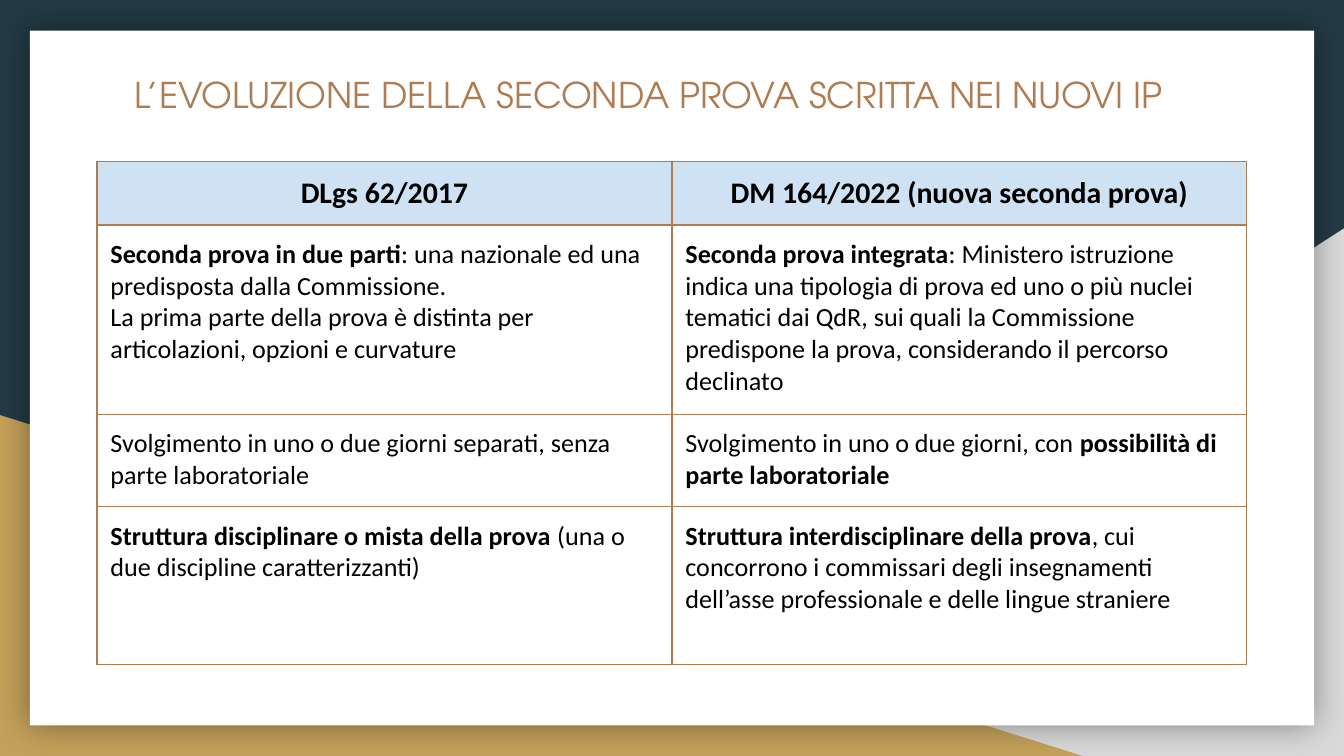
import pptx
import pptx.dml.color
import pptx.enum.shapes
import pptx.enum.text
import pptx.oxml
import pptx.oxml.ns
import pptx.util

Pt = pptx.util.Pt
qn = pptx.oxml.ns.qn
SHAPE = pptx.enum.shapes.MSO_SHAPE
ALIGN = pptx.enum.text.PP_ALIGN

COLORS = {
    "night": "233A44",
    "grey": "D9D9D9",
    "gold": "C4A15A",
    "paper": "FFFFFF",
    "copper": "AF7B51",
    "header": "CFE2F3",
    "ink": "000000",
}
TITLE = "L’EVOLUZIONE DELLA SECONDA PROVA SCRITTA NEI NUOVI IP"
HEADINGS = ["DLgs 62/2017", "DM 164/2022 (nuova seconda prova)"]

# Each cell is a list of paragraphs; each paragraph a list of (text, bold).
COMPARISON = [
    [
        [
            [("Seconda prova in due parti", True),
             (": una nazionale ed una predisposta dalla Commissione.", False)],
            [("La prima parte della prova è distinta per articolazioni, "
              "opzioni e curvature", False)],
        ],
        [[("Seconda prova integrata", True),
          (": Ministero istruzione indica una tipologia di prova ed uno o più "
           "nuclei tematici dai QdR, sui quali la Commissione predispone la "
           "prova, considerando il percorso declinato", False)]],
    ],
    [
        [[("Svolgimento in uno o due giorni separati, senza parte "
           "laboratoriale", False)]],
        [[("Svolgimento in uno o due giorni, con ", False),
          ("possibilità di parte laboratoriale", True)]],
    ],
    [
        [[("Struttura disciplinare o mista della prova", True),
          (" (una o due discipline caratterizzanti)", False)]],
        [[("Struttura interdisciplinare della prova", True),
          (", cui concorrono i commissari degli insegnamenti dell’asse "
           "professionale e delle lingue straniere", False)]],
    ],
]
ROW_HEIGHTS = [34, 101.5, 49.5, 84.4]


def rgb(name):
    return pptx.dml.color.RGBColor.from_string(COLORS[name])


class SlideBuilder:
    title_font = "TeX Gyre Adventor"
    body_font = "Calibri"
    inset = Pt(7.2)
    border_width = Pt(0.75)

    def __init__(self, slide):
        self.slide = slide

    def background(self, color):
        fill = self.slide.background.fill
        fill.solid()
        fill.fore_color.rgb = rgb(color)

    def panel(self, kind, left, top, width, height, color, flip=False):
        panel = self.slide.shapes.add_shape(
            kind, Pt(left), Pt(top), Pt(width), Pt(height))
        panel.shadow.inherit = False
        panel.fill.solid()
        panel.fill.fore_color.rgb = rgb(color)
        panel.line.fill.background()
        if flip:
            panel.element.spPr.find(qn("a:xfrm")).set("flipH", "1")
        return panel

    def soft_shadow(self, panel, blur, opacity):
        effects = panel.element.spPr.find(qn("a:effectLst"))
        effects.append(pptx.oxml.parse_xml(
            f'<a:outerShdw {pptx.oxml.ns.nsdecls("a")} blurRad="{Pt(blur)}" '
            f'dist="0" dir="0" algn="ctr" rotWithShape="0">'
            f'<a:srgbClr val="{COLORS["ink"]}">'
            f'<a:alpha val="{opacity * 1000}"/></a:srgbClr></a:outerShdw>'))

    def style_run(self, run, font, size, color, bold=False):
        run.font.name = font
        run.font.size = Pt(size)
        run.font.bold = bold
        run.font.color.rgb = rgb(color)

    def set_insets(self, holder):
        holder.margin_left = holder.margin_right = self.inset
        holder.margin_top = holder.margin_bottom = self.inset

    def title(self, text, left, top, width, height):
        title = self.slide.shapes.title
        title.left, title.top = Pt(left), Pt(top)
        title.width, title.height = Pt(width), Pt(height)
        frame = title.text_frame
        frame.text = text
        frame.word_wrap = True
        frame.auto_size = pptx.enum.text.MSO_AUTO_SIZE.NONE
        frame.vertical_anchor = pptx.enum.text.MSO_ANCHOR.TOP
        self.set_insets(frame)
        paragraph = frame.paragraphs[0]
        paragraph.alignment = ALIGN.LEFT
        self.style_run(paragraph.runs[0], self.title_font, 19, "copper")
        # The title placeholder comes first in the tree: lift it above the panels.
        title.element.getparent().append(title.element)

    def border(self, cell):
        properties = cell._tc.get_or_add_tcPr()
        for side in ("lnL", "lnR", "lnT", "lnB"):
            properties.append(pptx.oxml.parse_xml(
                f'<a:{side} {pptx.oxml.ns.nsdecls("a")} w="{self.border_width}">'
                f'<a:solidFill><a:srgbClr val="{COLORS["copper"]}"/></a:solidFill>'
                f'</a:{side}>'))

    def fill_cell(self, cell, paragraphs, size, align, color=None):
        self.set_insets(cell)
        self.border(cell)
        if color:
            cell.fill.solid()
            cell.fill.fore_color.rgb = rgb(color)
        else:
            cell.fill.background()
        frame = cell.text_frame
        for index, pieces in enumerate(paragraphs):
            paragraph = frame.add_paragraph() if index else frame.paragraphs[0]
            paragraph.alignment = align
            for text, bold in pieces:
                run = paragraph.add_run()
                run.text = text
                self.style_run(run, self.body_font, size, "ink", bold)

    def comparison_table(self, headings, rows, heights, left, top, width):
        table = self.slide.shapes.add_table(
            len(heights), len(headings),
            Pt(left), Pt(top), Pt(width), Pt(sum(heights))).table
        table.first_row = table.horz_banding = False
        for column in table.columns:
            column.width = Pt(width / len(headings))
        for row, height in zip(table.rows, heights):
            row.height = Pt(height)
        for column, heading in enumerate(headings):
            self.fill_cell(table.cell(0, column), [[(heading, True)]],
                           16, ALIGN.CENTER, "header")
        for row, cells in enumerate(rows, start=1):
            for column, paragraphs in enumerate(cells):
                self.fill_cell(table.cell(row, column), paragraphs,
                               14, ALIGN.LEFT)


def main():
    deck = pptx.Presentation()
    deck.slide_width, deck.slide_height = Pt(720), Pt(405)
    builder = SlideBuilder(deck.slides.add_slide(deck.slide_layouts[5]))

    builder.background("night")
    builder.panel(SHAPE.RIGHT_TRIANGLE, 282, 122.4, 438, 282.6, "grey", flip=True)
    builder.panel(SHAPE.RIGHT_TRIANGLE, 0, 222.4, 580, 182.6, "gold")
    paper = builder.panel(SHAPE.RECTANGLE, 16, 16.4, 688, 372.2, "paper")
    builder.soft_shadow(paper, blur=18, opacity=40)

    builder.title(TITLE, 64.8, 31.7, 591, 46)
    builder.comparison_table(HEADINGS, COMPARISON, ROW_HEIGHTS, 52, 86.5, 616)
    deck.save("out.pptx")


if __name__ == "__main__":
    main()
